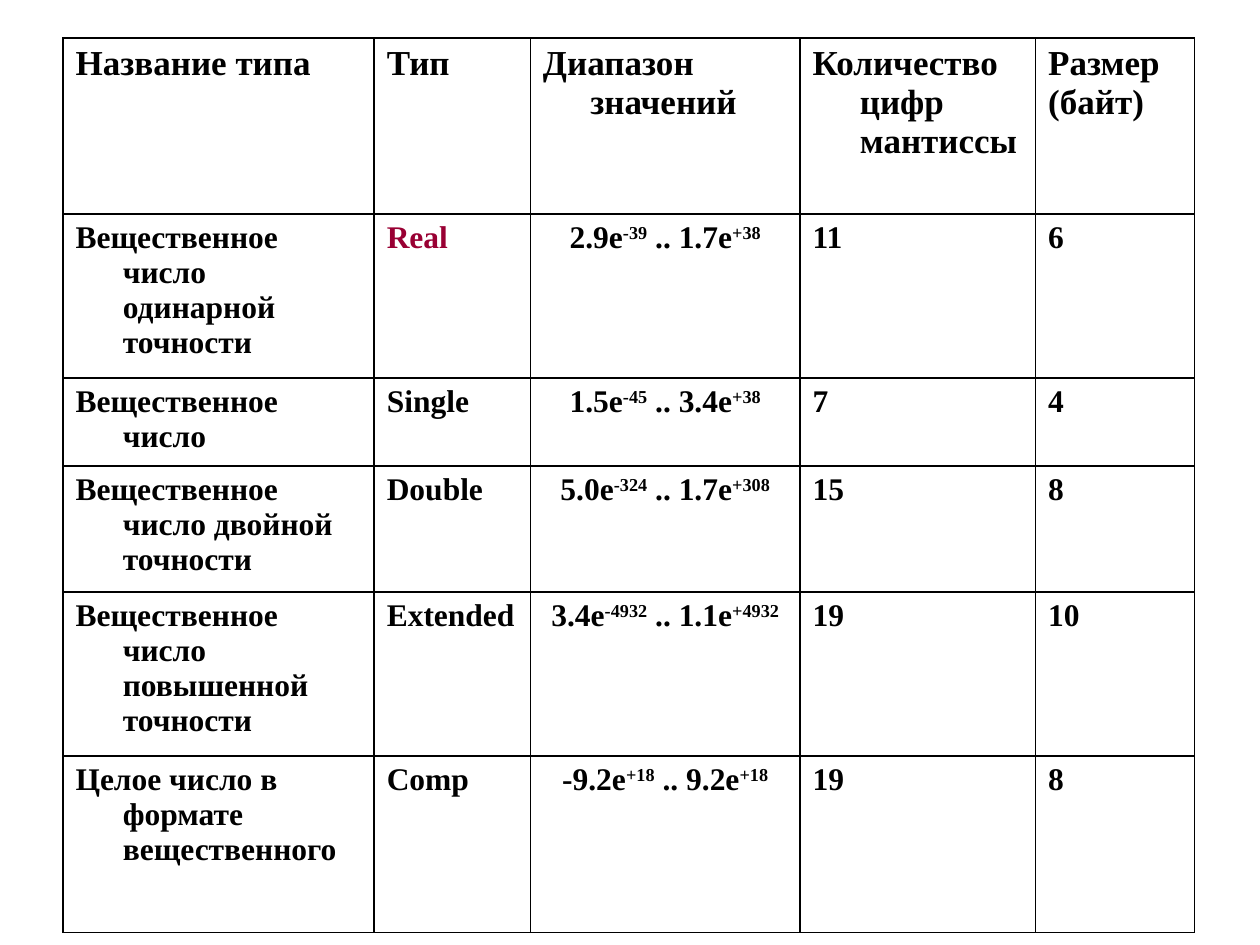
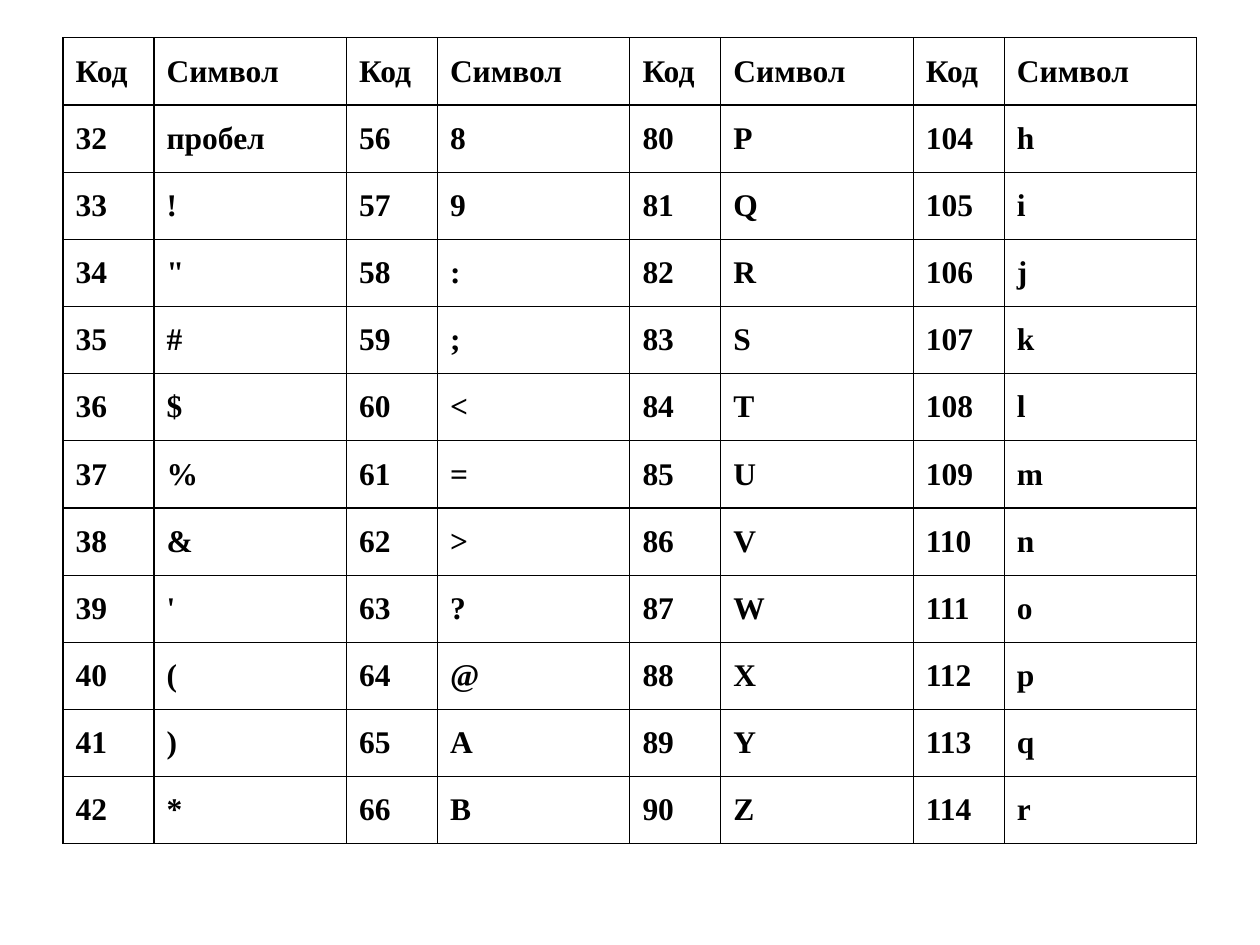
from dataclasses import dataclass

from lxml.etree import SubElement
from pptx import Presentation
from pptx.dml.color import RGBColor
from pptx.enum.text import MSO_ANCHOR as Anchor, PP_ALIGN as Align
from pptx.oxml.ns import qn
from pptx.util import Pt


@dataclass(frozen=True)
class Theme:
    font: str = "Times New Roman"
    ink: str = "000000"
    accent: str = "990033"
    header_size: int = 20
    body_size: int = 18
    hanging: int = 27
    left: int = 36
    top: float = 21.6


THEME = Theme()

REAL_TYPES = [
    ("Название типа", "Тип", "Диапазон значений",
     "Количество цифр мантиссы", "Размер\n(байт)"),
    ("Вещественное число одинарной точности", "Real",
     "2.9e^-39^ .. 1.7e^+38", "11", "6"),
    ("Вещественное число", "Single", "1.5e^-45^ .. 3.4e^+38", "7", "4"),
    ("Вещественное число двойной точности", "Double",
     "5.0e^-324^ .. 1.7e^+308", "15", "8"),
    ("Вещественное число повышенной точности", "Extended",
     "3.4e^-4932^ .. 1.1e^+4932", "19", "10"),
    ("Целое число в формате вещественного", "Comp",
     "-9.2e^+18^ .. 9.2e^+18", "19", "8"),
]
TYPE_WIDTHS = [177.84, 89.28, 154.08, 134.64, 90.72]
TYPE_HEIGHTS = [100.8, 93.6, 50.4, 72, 93.6, 100.8]
RANGE_COLUMN = 2

FIRST_CODES = range(32, 105, 24)
CODE_ROWS = 11
CODE_WIDTHS = [52, 110] * len(FIRST_CODES)
CODE_HEIGHT = 38.4


def write_text(frame, text, size=THEME.body_size, color=THEME.ink,
               align=Align.LEFT, hanging=0):
    """Newlines part paragraphs; every second piece between ^ is superscript."""
    for number, line in enumerate(text.split("\n")):
        paragraph = frame.add_paragraph() if number else frame.paragraphs[0]
        paragraph.alignment = align
        if hanging:
            properties = paragraph._p.get_or_add_pPr()
            properties.set("marL", str(Pt(hanging)))
            properties.set("indent", str(Pt(-hanging)))
        for piece_number, piece in enumerate(line.split("^")):
            run = paragraph.add_run()
            run.text = piece
            run.font.name = THEME.font
            run.font.size = Pt(size)
            run.font.bold = True
            run.font.color.rgb = RGBColor.from_string(color)
            if piece_number % 2:
                run._r.get_or_add_rPr().set("baseline", "30000")


def outline_cell(cell, width):
    properties = cell._tc.get_or_add_tcPr()
    for side in ("a:lnL", "a:lnR", "a:lnT", "a:lnB"):
        border = SubElement(properties, qn(side), w=str(Pt(width)))
        fill = SubElement(border, qn("a:solidFill"))
        SubElement(fill, qn("a:srgbClr"), val=THEME.ink)


def add_grid(slide, rows, widths, heights, border, text_format,
             anchor=Anchor.TOP):
    """text_format(row, column) gives the write_text options of a cell."""
    table = slide.shapes.add_table(
        len(rows), len(widths), Pt(THEME.left), Pt(THEME.top),
        Pt(sum(widths)), Pt(sum(heights))).table
    table.first_row = table.horz_banding = False
    for column, width in zip(table.columns, widths):
        column.width = Pt(width)
    for row, height in zip(table.rows, heights):
        row.height = Pt(height)
    for row_number, texts in enumerate(rows):
        for column_number, text in enumerate(texts):
            cell = table.cell(row_number, column_number)
            outline_cell(cell, border)
            cell.fill.background()
            cell.vertical_anchor = anchor
            write_text(cell.text_frame, text,
                       **text_format(row_number, column_number))


def real_type_format(row, column):
    options = {"hanging": THEME.hanging}
    if row == 0:
        options["size"] = THEME.header_size
    elif column == RANGE_COLUMN:
        options["align"] = Align.CENTER
    elif REAL_TYPES[row][column] == "Real":
        options["color"] = THEME.accent
    return options


def character_code_rows():
    rows = [["Код", "Символ"] * len(FIRST_CODES)]
    for offset in range(CODE_ROWS):
        row = []
        for first in FIRST_CODES:
            code = first + offset
            row += [str(code), "пробел" if code == 32 else chr(code)]
        rows.append(row)
    return rows


def main():
    deck = Presentation()
    deck.slide_width, deck.slide_height = Pt(720), Pt(540)
    blank = deck.slide_layouts[6]

    add_grid(deck.slides.add_slide(blank), REAL_TYPES, TYPE_WIDTHS,
             TYPE_HEIGHTS, 1, real_type_format)

    codes = character_code_rows()
    add_grid(deck.slides.add_slide(blank), codes, CODE_WIDTHS,
             [CODE_HEIGHT] * len(codes), 0.75, lambda row, column: {},
             anchor=Anchor.MIDDLE)

    deck.save("out.pptx")


if __name__ == "__main__":
    main()
